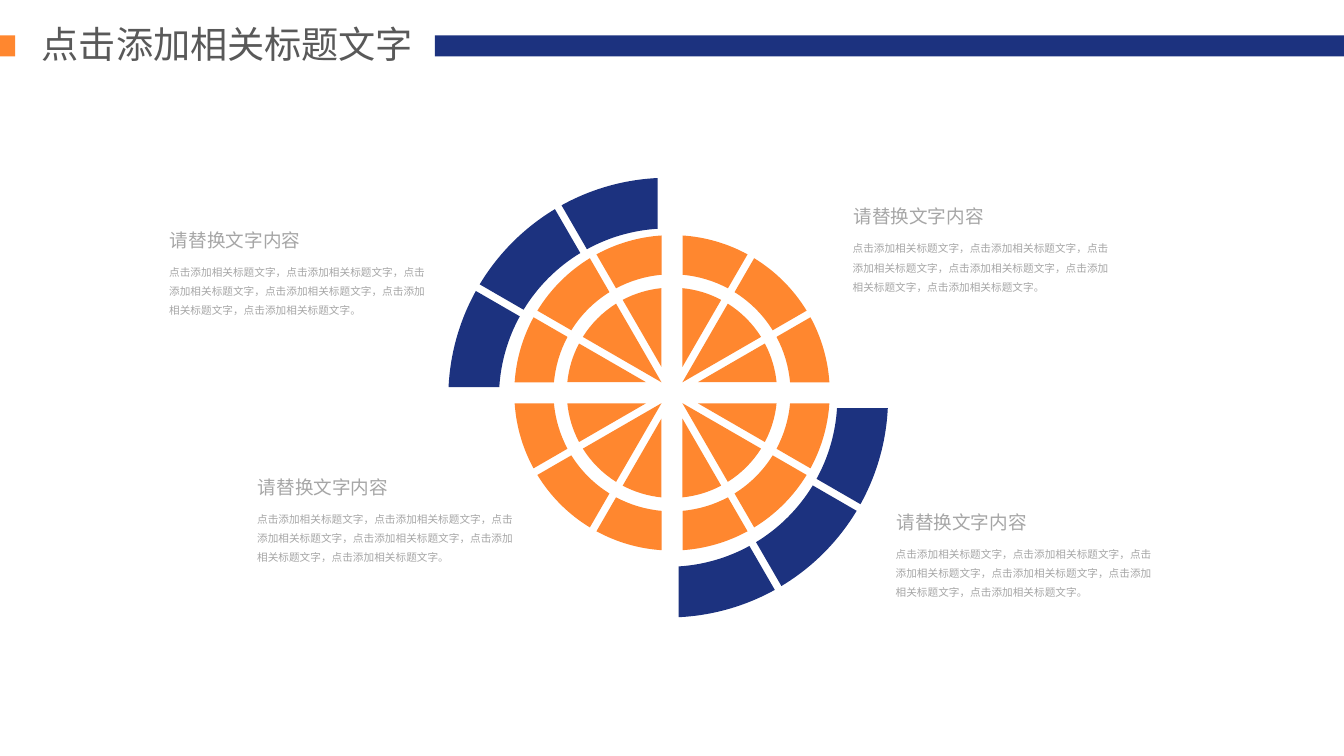
from math import asin, cos, pi, radians, sin, tan

from lxml import etree
from pptx import Presentation
from pptx.dml.color import RGBColor
from pptx.enum.shapes import MSO_SHAPE
from pptx.enum.text import MSO_AUTO_SIZE
from pptx.oxml.ns import qn
from pptx.util import Inches, Pt

RECT = MSO_SHAPE.RECTANGLE
GROW = MSO_AUTO_SIZE.SHAPE_TO_FIT_TEXT
COLORS = {"navy": "1C327F", "orange": "FF872F", "title": "595959", "text": "A6A6A6"}
SANS = "Noto Sans CJK SC"

TITLE = "点击添加相关标题文字"
HEAD = "请替换文字内容"
BODY = "，".join([TITLE] * 6) + "。"
NOTES = [(1.68, 2.3), (2.6, 4.88), (8.83, 2.05), (9.28, 5.25)]

CROSS = 0.11  # half width of the gaps between quarters
SPOKE = 0.04  # half width of the gaps inside a quarter


def paint(shape, color):
    shape.shadow.inherit = False
    shape.fill.solid()
    shape.fill.fore_color.rgb = RGBColor.from_string(COLORS[color])
    shape.line.fill.background()


def add_bar(slide, left, top, width, height, color):
    bar = slide.shapes.add_shape(
        RECT, Inches(left), Inches(top), Inches(width), Inches(height))
    paint(bar, color)


def add_text(slide, box, words, size, font, color, spacing=None, inset=0.1, wrap=True):
    frame = slide.shapes.add_textbox(*[Inches(n) for n in box]).text_frame
    frame.word_wrap = wrap
    frame.auto_size = GROW
    frame.margin_left = frame.margin_right = Inches(inset)
    para = frame.paragraphs[0]
    para.line_spacing = spacing
    run = para.add_run()
    run.text = words
    run.font.size = Pt(size)
    run.font.name = font
    run.font.color.rgb = RGBColor.from_string(COLORS[color])
    east = etree.SubElement(run.font._element, qn("a:ea"))
    east.set("typeface", font)


def add_header(slide, left, top):
    add_bar(slide, left, top + 0.37, 0.16, 0.22, "orange")
    add_bar(slide, left + 4.55, top + 0.37, 9.51, 0.22, "navy")
    add_text(slide, (left + 0.34, top + 0.17, 4.13, 0.57), TITLE, 28, SANS,
             "title", wrap=False)


def add_note(slide, left, top):
    add_text(slide, (left, top, 2.66, 0.39), HEAD, 14, "Arial", "text", 1.2, 0.1)
    add_text(slide, (left, top + 0.37, 2.9, 0.7), BODY, 8, SANS, "text", 1.5, 0.09)


def half_gap(angle):
    return SPOKE if angle % 90 else CROSS


def arc(radius, start, end):
    """Ends and control points of a curve that keeps clear of both gaps."""
    a = radians(start) + asin(half_gap(start) / radius)
    b = radians(end) - asin(half_gap(end) / radius)
    pull = 4 / 3 * tan((b - a) / 4)
    spots = [(a, 0), (a, pull), (b, -pull), (b, 0)]
    return [(radius * (cos(t) - k * sin(t)), radius * (sin(t) + k * cos(t)))
            for t, k in spots]


def tip(start, end):
    """Point where the two gap edges of a wedge meet."""
    a, b = radians(start), radians(end)
    near, far = half_gap(start), half_gap(end)
    span = sin(pi / 6)
    x = (near * cos(b) + far * cos(a)) / span
    y = (near * sin(b) + far * sin(a)) / span
    return [(x, y)]


def bend(shape):
    """Join every three lines that follow a corner into one curve."""
    count = 0
    for step in list(shape._element.iter(qn("a:moveTo"), qn("a:lnTo"))):
        if step.tag == qn("a:moveTo"):
            count = 0
            continue
        if count % 4 == 0:
            curve = etree.Element(qn("a:cubicBezTo"))
            step.addprevious(curve)
        if count % 4 < 3:
            curve.append(step[0])
            step.getparent().remove(step)
        count += 1


def add_ring(slide, mid, outer, inner, starts, color):
    """Ring of 30-degree pieces; an inner radius of 0 gives wedges."""
    build = None
    for start in starts:
        end = start + 30
        inside = arc(inner, start, end)[::-1] if inner else tip(start, end)
        points = [(Inches(mid[0] + x), Inches(mid[1] + y))
                  for x, y in arc(outer, start, end) + inside]
        if build is None:
            build = slide.shapes.build_freeform(*points[0])
        else:
            build.move_to(*points[0])
        build.add_line_segments(points[1:], close=True)
    ring = build.convert_to_shape()
    bend(ring)
    paint(ring, color)


def add_wheel(slide, x, y):
    turn = range(0, 360, 30)
    sides = [*range(0, 90, 30), *range(180, 270, 30)]
    add_ring(slide, (x - 0.04, y + 0.05), 2.3, 1.77, sides, "navy")
    add_ring(slide, (x, y), 1.65, 1.24, turn, "orange")
    add_ring(slide, (x, y), 1.1, 0, turn, "orange")


def main():
    deck = Presentation()
    deck.slide_width = Inches(14.06)
    deck.slide_height = Inches(7.91)
    slide = deck.slides.add_slide(deck.slide_layouts[6])
    add_header(slide, 0, 0)
    add_wheel(slide, 7.03, 4.11)
    for left, top in NOTES:
        add_note(slide, left, top)
    deck.save("out.pptx")


if __name__ == "__main__":
    main()
